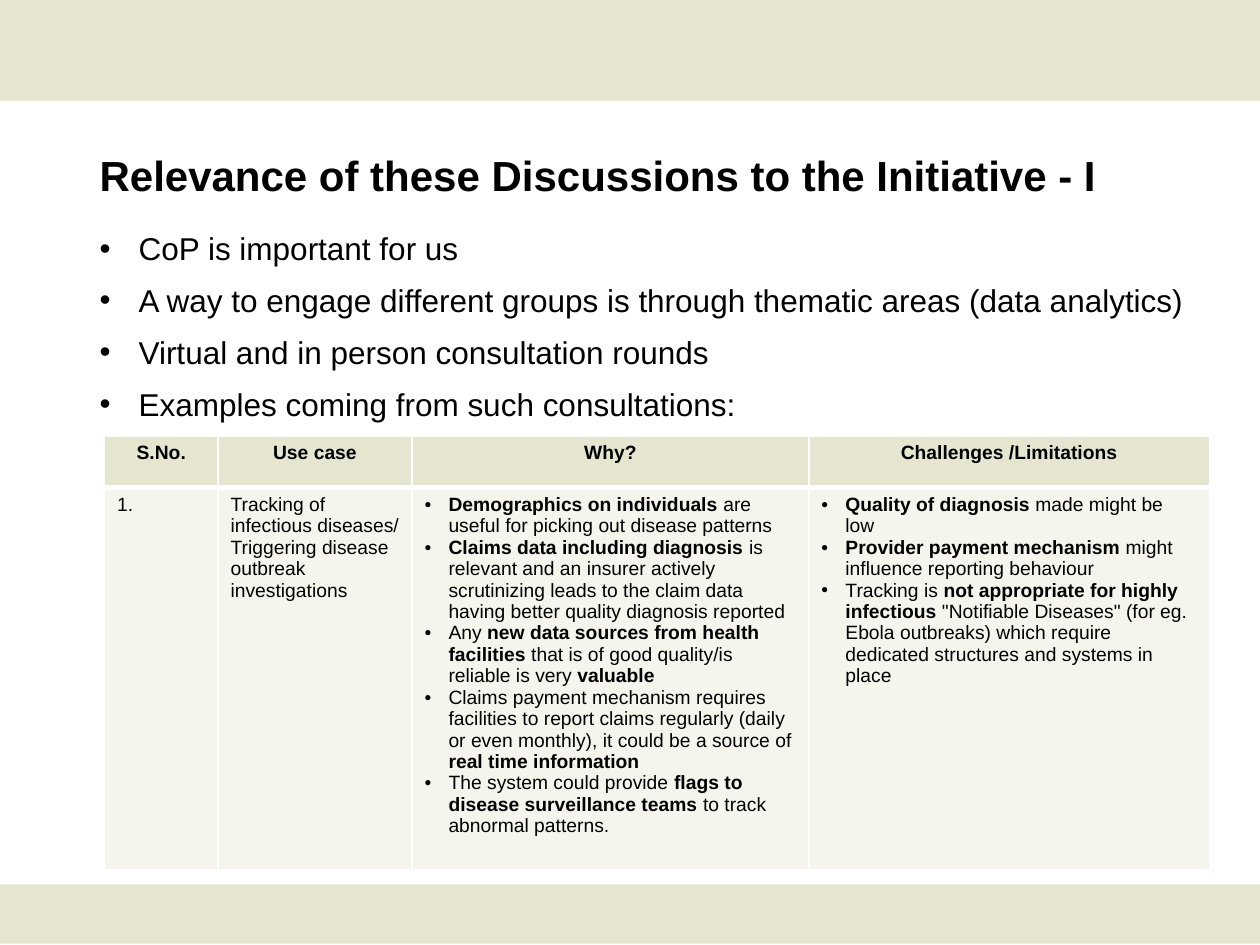
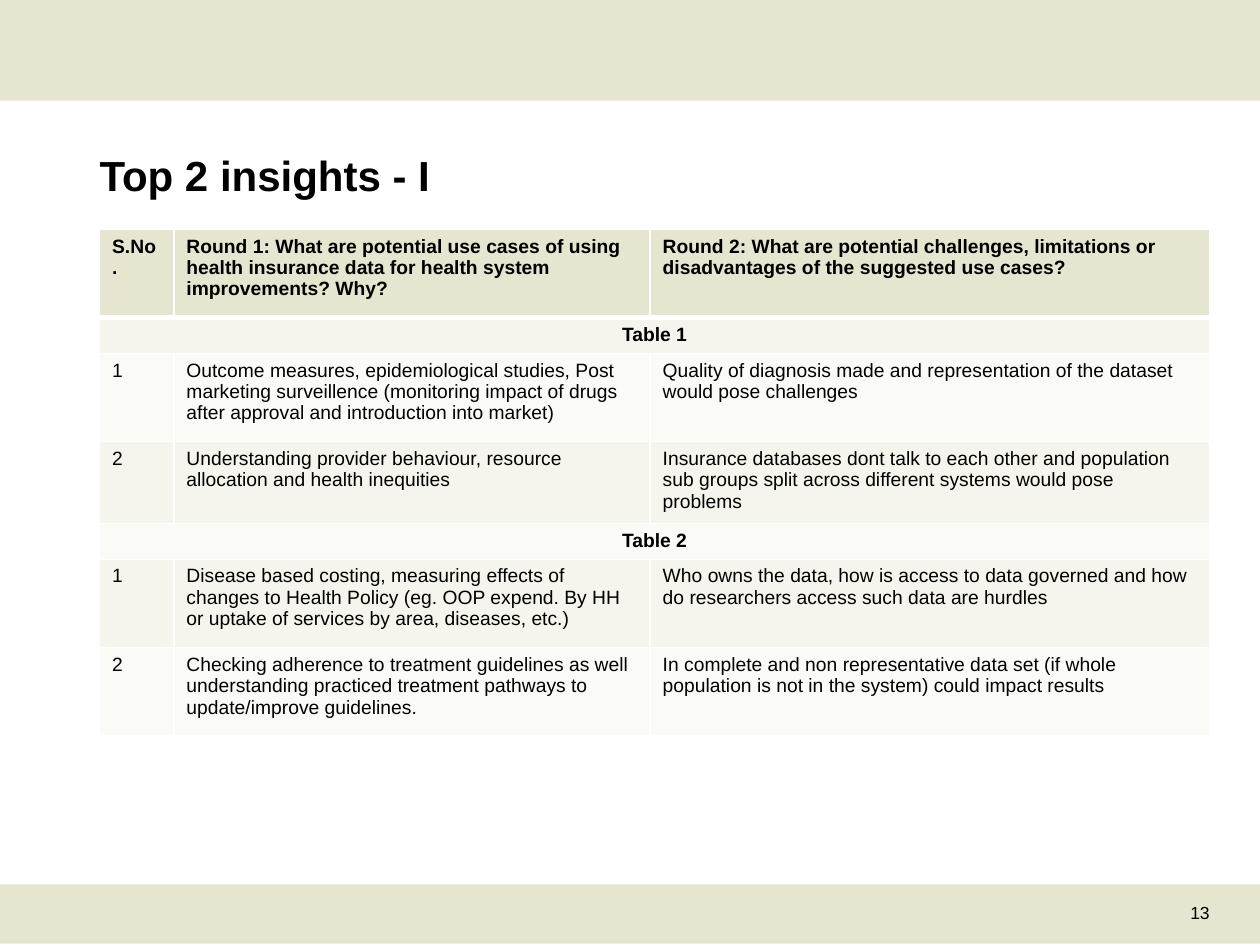
import pptx
import pptx.dml.color
import pptx.enum.shapes
import pptx.enum.text
import pptx.oxml
import pptx.oxml.ns
import pptx.util
from pptx.util import Inches

ALIGN = pptx.enum.text.PP_ALIGN


def rgb(hex_value):
    return pptx.dml.color.RGBColor.from_string(hex_value)


def add_element(parent, markup):
    namespace = pptx.oxml.ns.nsdecls("a")
    parent.append(pptx.oxml.parse_xml(markup.replace("XMLNS", namespace)))


class Deck:
    FONT = "Arial"
    INK = "000000"
    BAND = "E5E5D0"
    ROW_FILLS = ("F5F5EE", "FAFAF7")
    RULE = "FFFFFF"
    LEFT, WIDTH = 0.79, 8.82

    def __init__(self):
        self.presentation = pptx.Presentation()
        self.presentation.slide_width = Inches(10)
        self.presentation.slide_height = Inches(7.5)
        self.slide = None

    def new_slide(self, title):
        self.slide = self.presentation.slides.add_slide(
            self.presentation.slide_layouts[6])
        self.band(7.02, 0.47)
        self.band(0, 0.8)
        self.text([title], self.LEFT, 1.19, self.WIDTH, 0.55, 24, bold=True)

    def band(self, top, height):
        band = self.slide.shapes.add_shape(
            pptx.enum.shapes.MSO_SHAPE.RECTANGLE,
            0, Inches(top), Inches(10), Inches(height))
        band.shadow.inherit = False
        band.fill.solid()
        band.fill.fore_color.rgb = rgb(self.BAND)
        band.line.fill.background()

    def text(self, lines, left, top, width, height, size, **style):
        frame = self.slide.shapes.add_textbox(
            Inches(left), Inches(top), Inches(width), Inches(height)).text_frame
        frame.word_wrap = True
        frame.margin_left = frame.margin_right = 0
        frame.margin_top = frame.margin_bottom = 0
        self.fill_frame(frame, lines, size, **style)

    def fill_frame(self, frame, lines, size, bold=False, align=ALIGN.LEFT,
                   indent=0, space_after=0):
        """Set the lines; ** toggles bold, and an indent makes them bulleted."""
        for index, line in enumerate(lines):
            paragraph = frame.add_paragraph() if index else frame.paragraphs[0]
            paragraph.alignment = align
            paragraph.space_after = pptx.util.Pt(space_after)
            if indent:
                self.bullet(paragraph, indent)
            for position, part in enumerate(line.split("**")):
                if part:
                    run = paragraph.add_run()
                    run.text = part
                    run.font.name = self.FONT
                    run.font.size = pptx.util.Pt(size)
                    run.font.bold = bold or position % 2 == 1
                    run.font.color.rgb = rgb(self.INK)

    def bullet(self, paragraph, indent):
        properties = paragraph._p.get_or_add_pPr()
        properties.set("marL", str(Inches(indent)))
        properties.set("indent", str(-Inches(indent)))
        add_element(properties, f'<a:buFont XMLNS typeface="{self.FONT}"/>')
        add_element(properties, '<a:buChar XMLNS char="•"/>')

    def table(self, left, top, widths, heights, rows, header_align=ALIGN.LEFT):
        """Draw a table: the first row is the header, a one-item row spans all
        columns, and a cell given as a list is bulleted."""
        table = self.slide.shapes.add_table(
            len(rows), len(widths), Inches(left), Inches(top),
            Inches(sum(widths)), Inches(sum(heights))).table
        for column, width in zip(table.columns, widths):
            column.width = Inches(width)
        for row, height in zip(table.rows, heights):
            row.height = Inches(height)
        for index, values in enumerate(rows):
            is_header, is_section = index == 0, len(values) == 1
            fill = self.BAND if is_header else self.ROW_FILLS[(index - 1) % 2]
            for cell in table.rows[index].cells:
                self.style_cell(cell, fill, index)
            if is_section:
                table.cell(index, 0).merge(table.cell(index, len(widths) - 1))
            align = ALIGN.CENTER if is_section else ALIGN.LEFT
            for column, value in enumerate(values):
                bulleted = isinstance(value, list)
                self.fill_frame(table.cell(index, column).text_frame,
                                value if bulleted else [value], 11,
                                bold=is_header or is_section,
                                align=header_align if is_header else align,
                                indent=0.19 if bulleted else 0)

    def style_cell(self, cell, fill, row):
        """Rule all four sides, with a heavier line below the header row."""
        properties = cell._tc.get_or_add_tcPr()
        heavy_side = {0: "B", 1: "T"}.get(row)
        for side in "LRTB":
            width = pptx.util.Pt(3 if side == heavy_side else 1)
            add_element(properties, f'<a:ln{side} XMLNS w="{width}"><a:solidFill>'
                        f'<a:srgbClr val="{self.RULE}"/></a:solidFill></a:ln{side}>')
        cell.fill.solid()
        cell.fill.fore_color.rgb = rgb(fill)

    def page_number(self, number):
        self.text([str(number)], 7.95, 7.16, 1.65, 0.25, 10, align=ALIGN.RIGHT)


def relevance_slide(deck):
    deck.new_slide("Relevance of these Discussions to the Initiative - I")
    deck.text([
        "CoP is important for us",
        "A way to engage different groups is through thematic areas (data analytics)",
        "Virtual and in person consultation rounds",
        "Examples coming from such consultations:",
    ], deck.LEFT, 1.82, deck.WIDTH, 4.88, 18, indent=0.31, space_after=8)
    reasons = [
        "**Demographics on individuals** are useful for picking out disease patterns",
        "**Claims data including diagnosis** is relevant and an insurer actively "
        "scrutinizing leads to the claim data having better quality diagnosis reported",
        "Any **new data sources from health facilities** that is of good quality/is "
        "reliable is very **valuable**",
        "Claims payment mechanism requires facilities to report claims regularly "
        "(daily or even monthly), it could be a source of **real time information**",
        "The system could provide **flags to disease surveillance teams** to track "
        "abnormal patterns.",
    ]
    limitations = [
        "**Quality of diagnosis** made might be low",
        "**Provider payment mechanism** might influence reporting behaviour",
        "Tracking is **not appropriate for highly infectious** \"Notifiable Diseases\" "
        "(for eg. Ebola outbreaks) which require dedicated structures and systems "
        "in place",
    ]
    deck.table(0.83, 3.46, [0.9, 1.54, 3.15, 3.18], [0.41, 2.81], [
        ["S.No.", "Use case", "Why?", "Challenges /Limitations"],
        ["1.", "Tracking of infectious diseases/ Triggering disease outbreak "
         "investigations", reasons, limitations],
    ], header_align=ALIGN.CENTER)


def insights_slide(deck):
    deck.new_slide("Top 2 insights - I")
    tall, section = 0.7, 0.27
    heights = [tall, section, tall, 0.61, section, tall, tall]
    deck.table(deck.LEFT, 1.82, [0.59, 3.78, 4.44], heights, [
        ["S.No.",
         "Round 1: What are potential use cases of using health insurance data for "
         "health system improvements? Why?",
         "Round 2: What are potential challenges, limitations or disadvantages of "
         "the suggested use cases?"],
        ["Table 1"],
        ["1",
         "Outcome measures, epidemiological studies, Post marketing surveillence "
         "(monitoring impact of drugs after approval and introduction into market)",
         "Quality of diagnosis made and representation of the dataset would pose "
         "challenges"],
        ["2",
         "Understanding provider behaviour, resource allocation and health inequities",
         "Insurance databases dont talk to each other and population sub groups "
         "split across different systems would pose problems"],
        ["Table 2"],
        ["1",
         "Disease based costing, measuring effects of changes to Health Policy (eg. "
         "OOP expend. By HH or uptake of services by area, diseases, etc.)",
         "Who owns the data, how is access to data governed and how do researchers "
         "access such data are hurdles"],
        ["2",
         "Checking adherence to treatment guidelines as well understanding "
         "practiced treatment pathways to update/improve guidelines.",
         "In complete and non representative data set (if whole population is not "
         "in the system) could impact results"],
    ])
    deck.page_number(13)


def main():
    deck = Deck()
    relevance_slide(deck)
    insights_slide(deck)
    deck.presentation.save("out.pptx")


if __name__ == "__main__":
    main()
